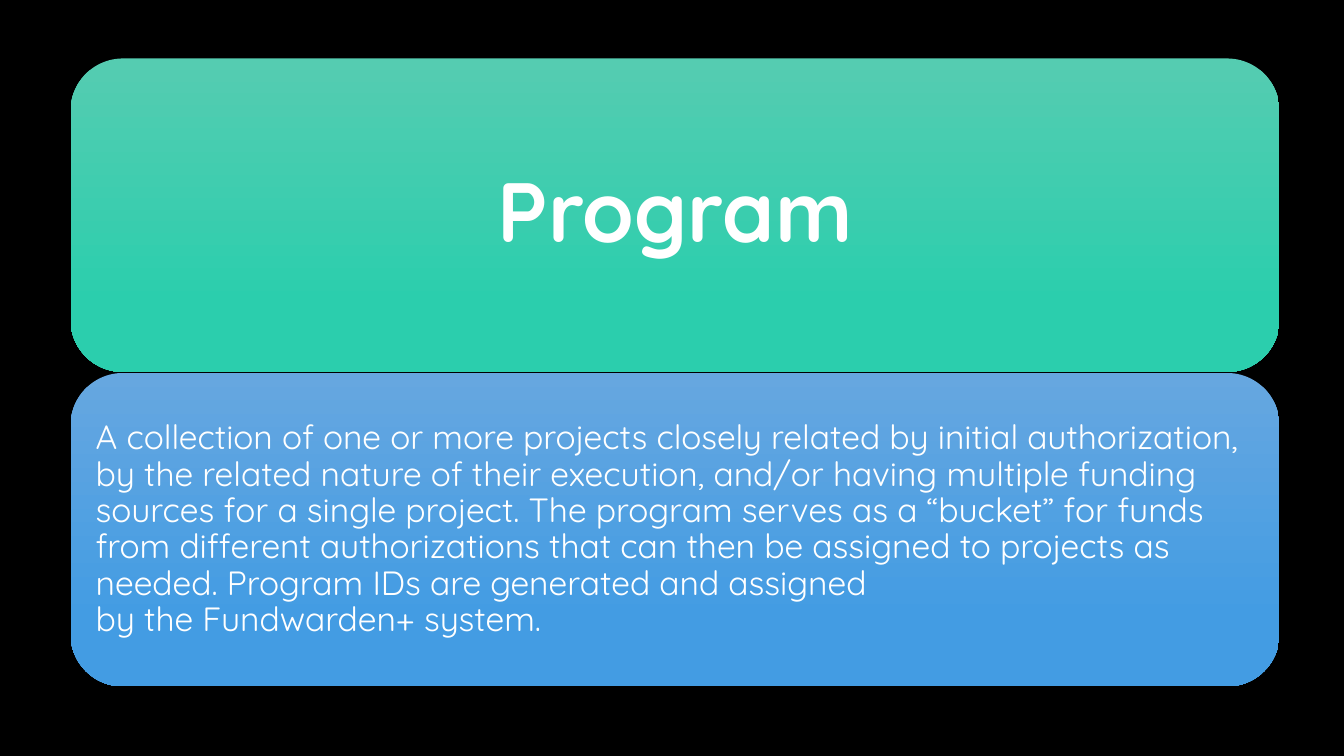
from dataclasses import dataclass
from pptx import Presentation
from pptx.dml.color import RGBColor as Rgb
from pptx.enum import shapes, text
from pptx.util import Inches, Pt


@dataclass
class Theme:
    font: str = "Quicksand"
    back: str = "000000"
    ink: str = "FFFFFF"
    green: tuple = ("55CCB1", "2BCEAD")
    blue: tuple = ("66A7E0", "439CE3")
    stops: tuple = (0, 0.78)
    head: int = 60
    body: int = 24


class Page:
    def __init__(self, deck, theme):
        self.theme = theme
        self.slide = deck.slides.add_slide(deck.slide_layouts[5])
        fill = self.slide.background.fill
        fill.solid()
        fill.fore_color.rgb = Rgb.from_string(theme.back)

    def panel(self, box, tones):
        card = self.slide.shapes.add_shape(
            shapes.MSO_SHAPE.ROUNDED_RECTANGLE, *map(Inches, box))
        card.shadow.inherit = False
        card.line.fill.background()
        card.fill.gradient()
        card.fill.gradient_angle = 270
        for stop, tone, place in zip(card.fill.gradient_stops, tones, self.theme.stops):
            stop.color.rgb = Rgb.from_string(tone)
            stop.position = place

    def title(self, box, words):
        item = self.slide.shapes.title
        self.slide.shapes._spTree.append(item._element)
        self.style(item, box, words, self.theme.head, 0.25, text.PP_ALIGN.CENTER, True)

    def text(self, box, words):
        item = self.slide.shapes.add_textbox(*map(Inches, box))
        self.style(item, box, words, self.theme.body, 0.1, text.PP_ALIGN.LEFT, False)

    def style(self, item, box, words, size, inset, align, bold):
        item.left, item.top, item.width, item.height = map(Inches, box)
        frame = item.text_frame
        frame.text = words
        frame.word_wrap = True
        frame.auto_size = text.MSO_AUTO_SIZE.NONE
        frame.vertical_anchor = text.MSO_ANCHOR.MIDDLE
        frame.margin_left = frame.margin_right = Inches(inset)
        frame.margin_top = frame.margin_bottom = Inches(inset)
        for para in frame.paragraphs:
            para.alignment = align
            para.line_spacing = 0.9
            para.space_before = Pt(0)
            for run in para.runs:
                run.font.name = self.theme.font
                run.font.size = Pt(size)
                run.font.bold = bold
                run.font.color.rgb = Rgb.from_string(self.theme.ink)


def main():
    deck = Presentation()
    deck.slide_width, deck.slide_height = Inches(13.33), Inches(7.5)
    theme = Theme()
    page = Page(deck, theme)
    left, wide, high, pad = 0.7, 11.99, 3.11, 0.15
    tops = (0.58, 3.7)
    for top, tones in zip(tops, (theme.green, theme.blue)):
        page.panel((left, top, wide, high), tones)
    head, body = [(left + pad, top + pad, wide - 2 * pad, high - 2 * pad) for top in tops]
    page.title(head, "Program")
    page.text(body, (
        "A collection of one or more projects closely related by initial authorization, "
        "by the related nature of their execution, and/or having multiple funding sources "
        "for a single project. The program serves as a “bucket” for funds from different "
        "authorizations that can then be assigned to projects as needed. "
        "Program IDs are generated and assigned\vby the Fundwarden+ system."))
    deck.save("out.pptx")


if __name__ == "__main__":
    main()
